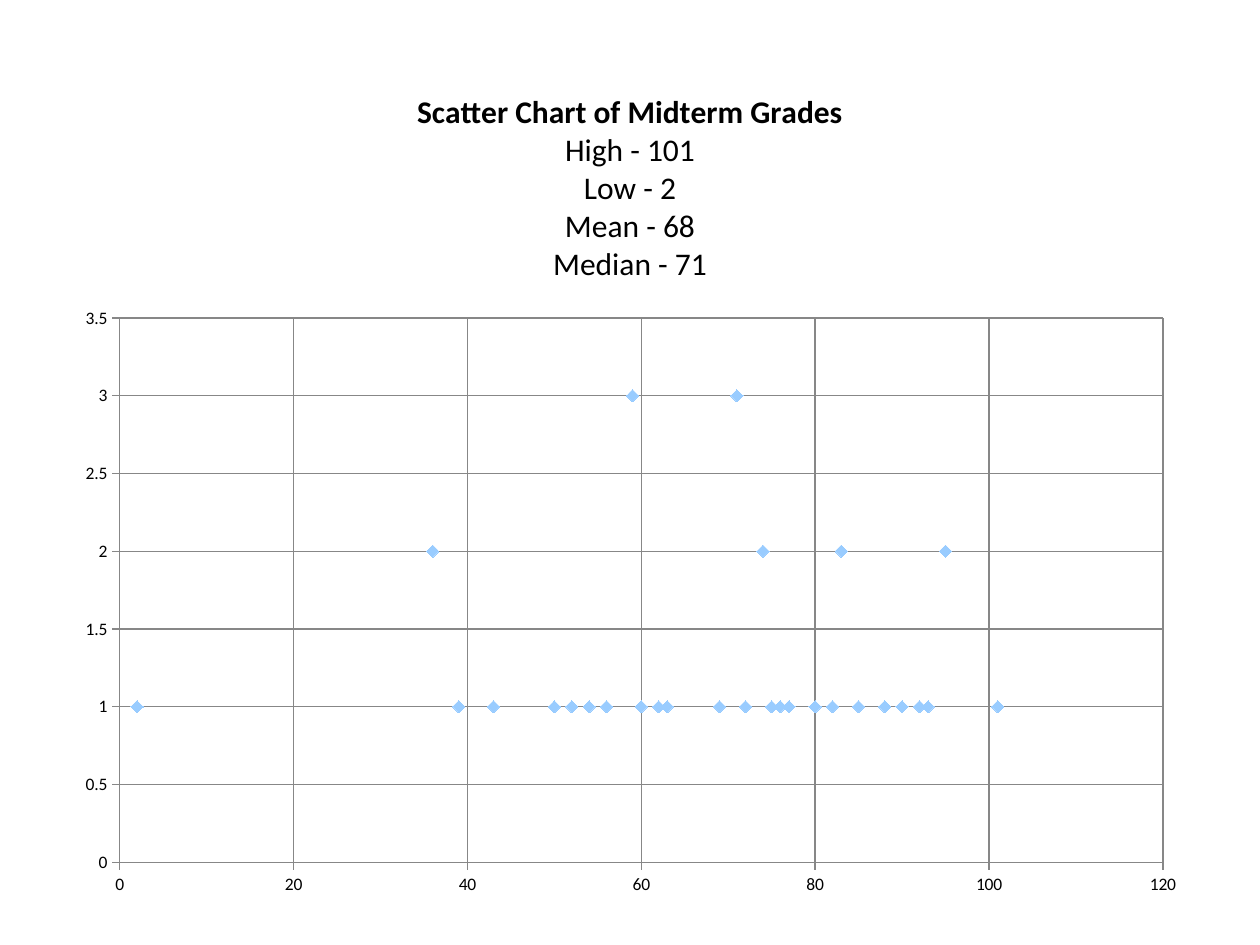
"""Build a slide with a scatter chart of midterm grades."""
from pptx import Presentation
from pptx.chart.data import XyChartData
from pptx.dml.color import RGBColor as RGB
from pptx.enum.chart import XL_CHART_TYPE as CT, XL_MARKER_STYLE as MS, XL_TICK_MARK as TM
from pptx.oxml import parse_xml
from pptx.oxml.ns import nsdecls
from pptx.util import Pt

COLORS = {"text": "000000", "grid": "878787", "marker": "99CCFF"}
FONT = "Calibri"
GRADES = [2, 36, 39, 43, 50, 52, 54, 56, 59, 60, 62, 63, 69, 71, 72,
          74, 75, 76, 77, 80, 82, 83, 85, 88, 90, 92, 93, 95, 101]
REPEATS = {36: 2, 59: 3, 71: 3, 74: 2, 83: 2, 95: 2}
TITLE = ["Scatter Chart of Midterm Grades", "High - 101", "Low - 2", "Mean - 68", "Median - 71"]
PLOT = {"x": 0.05, "y": 0.3, "w": 0.92, "h": 0.64}

prs = Presentation()
prs.slide_width, prs.slide_height = Pt(720), Pt(540)
slide = prs.slides.add_slide(prs.slide_layouts[6])

data = XyChartData()
series = data.add_series("Series 1")
for grade in GRADES:
    series.add_data_point(grade, REPEATS.get(grade, 1))
chart = slide.shapes.add_chart(CT.XY_SCATTER, Pt(36), Pt(36), Pt(648), Pt(486), data).chart
chart.has_legend = False
chart.font.name, chart.font.size = FONT, Pt(10)
chart.font.color.rgb = RGB.from_string(COLORS["text"])

chart.has_title = True
tf = chart.chart_title.text_frame
for i, line in enumerate(TITLE):
    p = tf.add_paragraph() if i else tf.paragraphs[0]
    r = p.add_run()
    r.text = line
    r.font.name, r.font.size, r.font.bold = FONT, Pt(18), i == 0
    r.font.color.rgb = RGB.from_string(COLORS["text"])
chart.chart_title.include_in_layout = False

for axis, top, step in ((chart.category_axis, 120, 20), (chart.value_axis, 3.5, 0.5)):
    axis.minimum_scale, axis.maximum_scale, axis.major_unit = 0, top, step
    axis.major_tick_mark, axis.minor_tick_mark = TM.OUTSIDE, TM.NONE
    axis.has_major_gridlines = True
    axis.tick_labels.number_format, axis.tick_labels.number_format_is_linked = "General", False
    for line in (axis.format.line, axis.major_gridlines.format.line):
        line.color.rgb = RGB.from_string(COLORS["grid"])
        line.width = Pt(0.75)

plot = chart.plots[0]
plot.vary_by_categories = False
grades = plot.series[0]
grades.smooth = False
grades.format.line.fill.background()
marker = grades.marker
marker.style, marker.size = MS.DIAMOND, 7
marker.format.fill.solid()
marker.format.fill.fore_color.rgb = RGB.from_string(COLORS["marker"])
marker.format.line.fill.background()

modes = "".join(f'<c:{k}Mode val="edge"/>' for k in "xy")
sizes = "".join(f'<c:{k} val="{v}"/>' for k, v in PLOT.items())
area = chart._chartSpace.chart.plotArea
for old in area.findall("{*}layout"):
    area.remove(old)
area.insert(0, parse_xml(
    f'<c:layout {nsdecls("c")}><c:manualLayout><c:layoutTarget val="inner"/>'
    f'{modes}{sizes}</c:manualLayout></c:layout>'))

prs.save("out.pptx")
